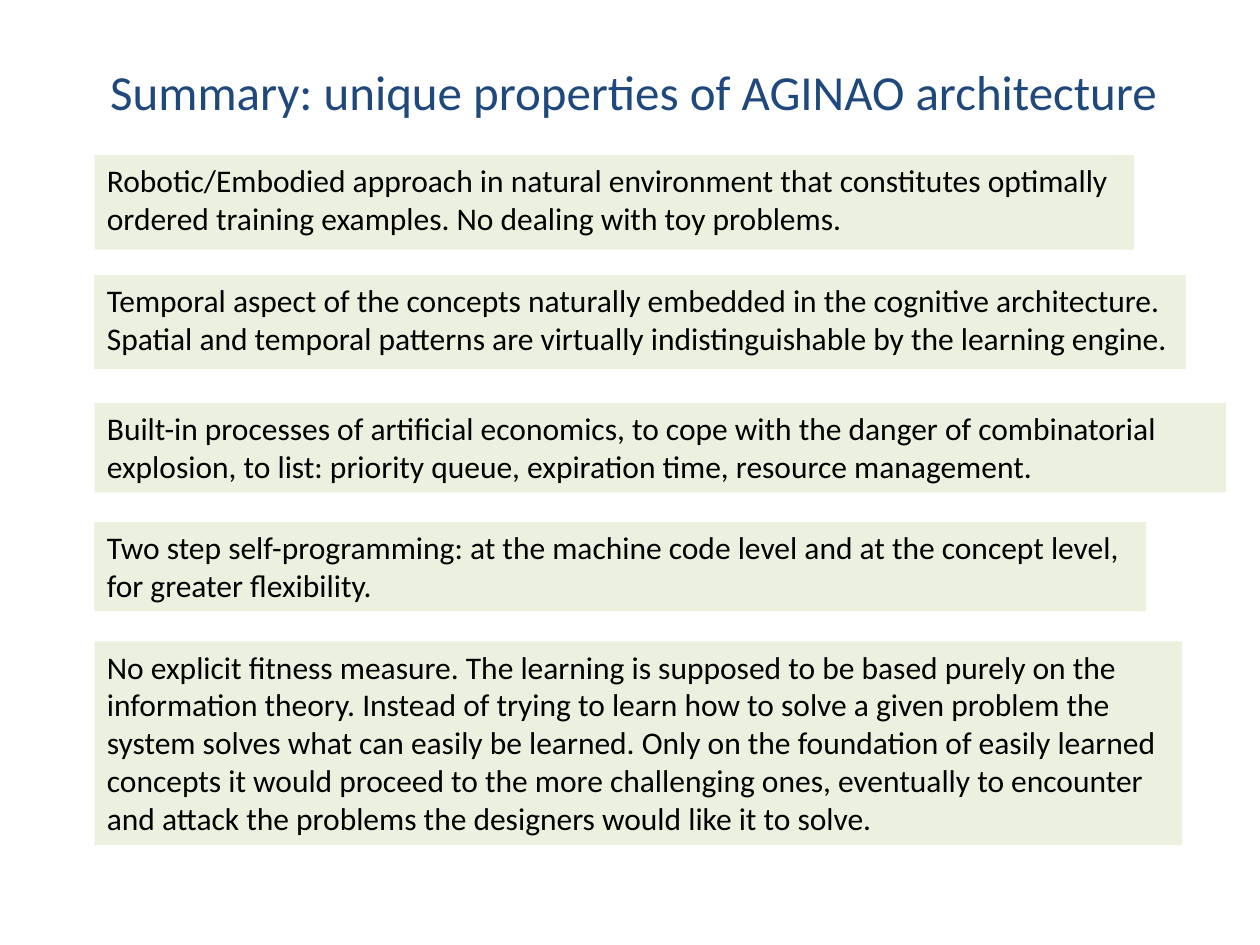
from pptx import Presentation
from pptx.dml.color import RGBColor
from pptx.enum.shapes import MSO_SHAPE
from pptx.enum.text import MSO_ANCHOR, MSO_AUTO_SIZE, PP_ALIGN
from pptx.util import Pt

RECTANGLE = MSO_SHAPE.RECTANGLE
TOP = MSO_ANCHOR.TOP
FIXED_SIZE = MSO_AUTO_SIZE.NONE
LEFT, CENTER = PP_ALIGN.LEFT, PP_ALIGN.CENTER

COLORS = {"title": "1F497D", "body": "000000", "panel": "EBF1DE"}
TITLE_ONLY = 5
PANEL_LEFT = 54

TITLE = "Summary: unique properties of AGINAO architecture"
PROPERTIES = [
    (88.6, 594, 54,
     "Robotic/Embodied approach in natural environment that constitutes optimally\n"
     "ordered training examples. No dealing with toy problems."),
    (157, 623.5, 54,
     "Temporal aspect of the concepts naturally embedded in the cognitive architecture.\n"
     "Spatial and temporal patterns are virtually indistinguishable by the learning engine."),
    (230.4, 646.5, 51,
     "Built-in processes of artificial economics, to cope with the danger of combinatorial\n"
     "explosion, to list: priority queue, expiration time, resource management."),
    (298.3, 601, 51,
     "Two step self-programming: at the machine code level and at the concept level,\n"
     "for greater flexibility."),
    (366.5, 621.5, 116.5,
     "No explicit fitness measure. The learning is supposed to be based purely on the\n"
     "information theory. Instead of trying to learn how to solve a given problem the\n"
     "system solves what can easily be learned. Only on the foundation of easily learned\n"
     "concepts it would proceed to the more challenging ones, eventually to encounter\n"
     "and attack the problems the designers would like it to solve."),
]


def write_text(frame, text, size, color, alignment):
    """Fill a text frame with one formatted paragraph."""
    frame.auto_size = FIXED_SIZE
    frame.word_wrap = True
    frame.vertical_anchor = TOP
    paragraph = frame.paragraphs[0]
    paragraph.text = text
    paragraph.alignment = alignment
    paragraph.font.name = "Calibri"
    paragraph.font.size = Pt(size)
    paragraph.font.color.rgb = RGBColor.from_string(COLORS[color])


def place_title(slide, left, top, width, height):
    """Move and format the title placeholder."""
    title = slide.shapes.title
    title.left, title.top = Pt(left), Pt(top)
    title.width, title.height = Pt(width), Pt(height)
    write_text(title.text_frame, TITLE, 28, "title", CENTER)


def add_property(slide, left, top, width, height, statement):
    """Add one shaded panel stating a property."""
    panel = slide.shapes.add_shape(RECTANGLE, Pt(left), Pt(top), Pt(width), Pt(height))
    panel.shadow.inherit = False
    panel.fill.solid()
    panel.fill.fore_color.rgb = RGBColor.from_string(COLORS["panel"])
    panel.line.fill.background()
    write_text(panel.text_frame, statement, 18, "body", LEFT)


def main():
    """Build and save the summary slide."""
    presentation = Presentation()
    presentation.slide_width, presentation.slide_height = Pt(720), Pt(540)
    slide = presentation.slides.add_slide(presentation.slide_layouts[TITLE_ONLY])
    place_title(slide, 52.5, 31.7, 619, 41)
    for top, width, height, statement in PROPERTIES:
        add_property(slide, PANEL_LEFT, top, width, height, statement)
    presentation.save("out.pptx")


if __name__ == "__main__":
    main()
